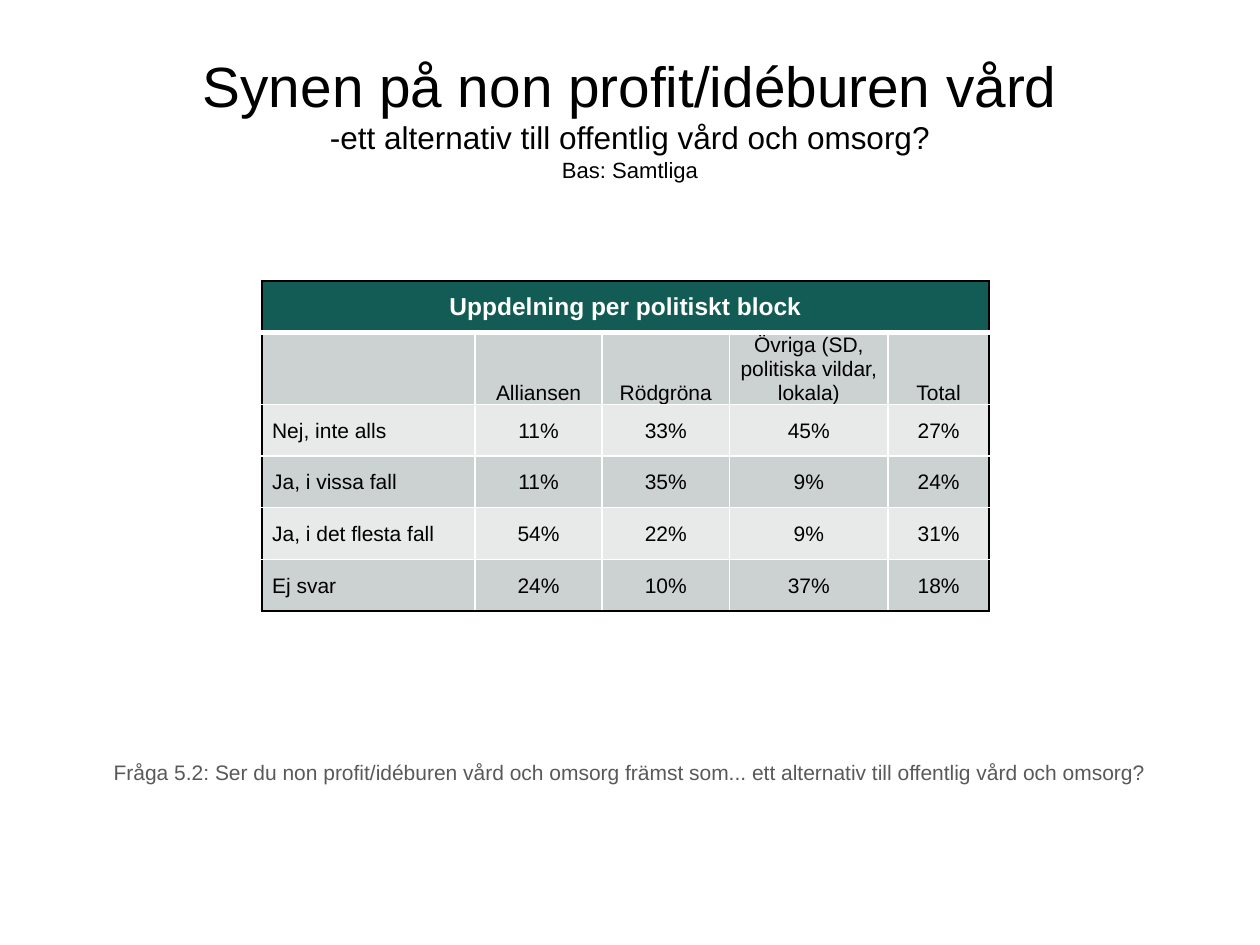
"""Build a slide with a table of views on non-profit care by political bloc."""
from dataclasses import dataclass

from lxml import etree
from pptx import Presentation
from pptx.dml.color import RGBColor
from pptx.enum.text import MSO_ANCHOR, PP_ALIGN
from pptx.oxml.ns import qn
from pptx.util import Inches, Pt

CENTER, LEFT = PP_ALIGN.CENTER, PP_ALIGN.LEFT
MIDDLE, BOTTOM = MSO_ANCHOR.MIDDLE, MSO_ANCHOR.BOTTOM
FONT = "Arial"
COLORS = {
    "white": "FFFFFF",
    "black": "000000",
    "gray": "595959",
    "header": "135C55",
    "dark_band": "CCD2D1",
    "light_band": "E7EAE9",
}
TABLE_TITLE = "Uppdelning per politiskt block"
ROWS = [
    ["", "Alliansen", "Rödgröna", "Övriga (SD, politiska vildar, lokala)", "Total"],
    ["Nej, inte alls", "11%", "33%", "45%", "27%"],
    ["Ja, i vissa fall", "11%", "35%", "9%", "24%"],
    ["Ja, i det flesta fall", "54%", "22%", "9%", "31%"],
    ["Ej svar", "24%", "10%", "37%", "18%"],
]
COLUMN_WIDTHS = [1.69, 1.01, 1.01, 1.26, 0.8]
ROW_HEIGHT = 0.41


@dataclass
class TextBlock:
    """A centred text box with one size per line."""

    top: float
    height: float
    lines: list[str]
    sizes: list[float]
    color: str


TEXT_BLOCKS = [
    TextBlock(
        0.3,
        1.25,
        [
            "Synen på non profit/idéburen vård",
            "-ett alternativ till offentlig vård och omsorg?",
            "Bas: Samtliga",
        ],
        [32.4, 18, 12.6],
        "black",
    ),
    TextBlock(
        5.98,
        0.3,
        [
            "Fråga 5.2: Ser du non profit/idéburen vård och omsorg främst som... "
            "ett alternativ till offentlig vård och omsorg?"
        ],
        [12],
        "gray",
    ),
]


def format_run(run, size: float, color: str, bold: bool = False) -> None:
    """Set the font of a run."""
    run.font.name = FONT
    run.font.size = Pt(size)
    run.font.bold = bold
    run.font.color.rgb = RGBColor.from_string(COLORS[color])


def add_text_block(slide, block: TextBlock) -> None:
    """Add a text box across the whole slide."""
    shape = slide.shapes.add_textbox(
        Inches(0), Inches(block.top), Inches(10), Inches(block.height)
    )
    text_frame = shape.text_frame
    text_frame.word_wrap = True
    text_frame.vertical_anchor = MIDDLE
    paragraph = text_frame.paragraphs[0]
    paragraph.text = "\v".join(block.lines)
    paragraph.alignment = CENTER
    for run, size in zip(paragraph.runs, block.sizes):
        format_run(run, size, block.color)


def add_border(cell, side: str, color: str, width: float) -> None:
    """Add one border line to a cell."""
    properties = cell._tc.get_or_add_tcPr()
    line = etree.SubElement(properties, qn(f"a:ln{side}"), w=str(Pt(width)))
    fill = etree.SubElement(line, qn("a:solidFill"))
    etree.SubElement(fill, qn("a:srgbClr"), val=COLORS[color])


def style_cell(cell, row: int, column: int) -> None:
    """Set the borders and the fill of a cell by its place in the table."""
    is_header = row == 0
    last_column = len(COLUMN_WIDTHS) - 1
    outer = {
        "L": is_header or column == 0,
        "R": is_header or column == last_column,
        "T": is_header,
        "B": row == len(ROWS),
    }
    for side, is_outer in outer.items():
        is_divider = (row, side) in ((0, "B"), (1, "T"))
        add_border(cell, side, "black" if is_outer else "white", 3 if is_divider else 1)
    band = "dark_band" if row % 2 else "light_band"
    cell.fill.solid()
    cell.fill.fore_color.rgb = RGBColor.from_string(
        COLORS["header" if is_header else band]
    )


def fill_cell(cell, row: int, column: int, text: str) -> None:
    """Write the text of a cell below the header."""
    cell.vertical_anchor = BOTTOM if row == 1 else MIDDLE
    cell.margin_left = Inches(0.08 if column == 0 else 0.01)
    cell.margin_right = cell.margin_top = Inches(0.01)
    cell.margin_bottom = Inches(0)
    paragraph = cell.text_frame.paragraphs[0]
    paragraph.text = text
    paragraph.alignment = LEFT if column == 0 else CENTER
    for run in paragraph.runs:
        format_run(run, 12, "black")


def add_bloc_table(slide) -> None:
    """Add the table of answers per political bloc."""
    row_count = len(ROWS) + 1
    table = slide.shapes.add_table(
        row_count,
        len(COLUMN_WIDTHS),
        Inches(2.08),
        Inches(2.23),
        Inches(sum(COLUMN_WIDTHS)),
        Inches(ROW_HEIGHT * row_count),
    ).table
    for column, width in zip(table.columns, COLUMN_WIDTHS):
        column.width = Inches(width)
    for row_index in range(row_count):
        table.rows[row_index].height = Inches(ROW_HEIGHT)
        for column_index in range(len(COLUMN_WIDTHS)):
            style_cell(table.cell(row_index, column_index), row_index, column_index)
    for row_index, texts in enumerate(ROWS, start=1):
        for column_index, text in enumerate(texts):
            cell = table.cell(row_index, column_index)
            fill_cell(cell, row_index, column_index, text)
    header = table.cell(0, 0)
    header.merge(table.cell(0, len(COLUMN_WIDTHS) - 1))
    header.vertical_anchor = MIDDLE
    paragraph = header.text_frame.paragraphs[0]
    paragraph.text = TABLE_TITLE
    paragraph.alignment = CENTER
    format_run(paragraph.runs[0], 14, "white", bold=True)


def main() -> None:
    """Create and save the presentation."""
    presentation = Presentation()
    presentation.slide_width = Inches(10)
    presentation.slide_height = Inches(7.5)
    slide = presentation.slides.add_slide(presentation.slide_layouts[6])
    add_bloc_table(slide)
    for block in TEXT_BLOCKS:
        add_text_block(slide, block)
    presentation.save("out.pptx")


if __name__ == "__main__":
    main()
